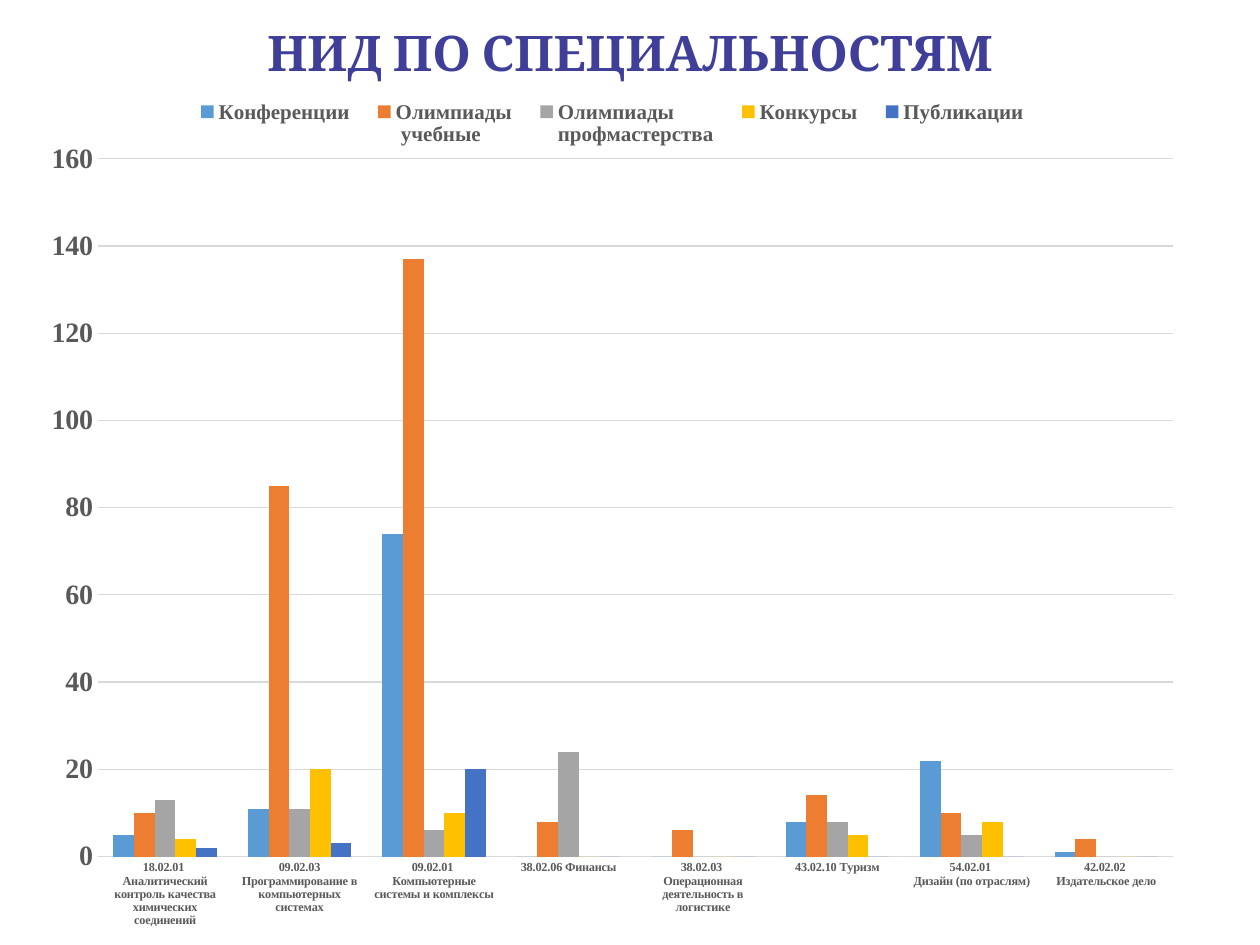
import lxml.etree
import pptx
import pptx.chart.data
import pptx.dml.color
import pptx.enum.chart
import pptx.enum.text
import pptx.oxml
import pptx.oxml.ns
import pptx.util
from dataclasses import dataclass

PX = 9144  # 100 px to the inch


@dataclass(frozen=True)
class Theme:
    title_font: str = "Cambria"
    chart_font: str = "Times New Roman"
    title: str = "3F3F9A"
    title_outline: str = "A585B1"
    label: str = "595959"
    grid: str = "D9D9D9"
    series: tuple = ("5B9BD5", "ED7D31", "A5A5A5", "FFC000", "4472C4")
    title_size: int = 28
    value_size: int = 16
    legend_size: int = 12
    category_size: int = 7


THEME = Theme()

CATEGORIES = [
    "18.02.01 \nАналитический контроль качества химических соединений",
    "09.02.03 Программирование в компьютерных системах",
    "09.02.01 \nКомпьютерные системы и комплексы",
    "38.02.06 Финансы",
    "38.02.03 \nОперационная деятельность в логистике",
    "43.02.10 Туризм",
    "54.02.01 \nДизайн (по отраслям)",
    "42.02.02 \nИздательское дело",
]
ACTIVITIES = {
    "Конференции": (5, 11, 74, 0, 0, 8, 22, 1),
    "Олимпиады\n учебные": (10, 85, 137, 8, 6, 14, 10, 4),
    "Олимпиады \nпрофмастерства": (13, 11, 6, 24, 0, 8, 5, 0),
    "Конкурсы": (4, 20, 10, 0, 0, 5, 8, 0),
    "Публикации": (2, 3, 20, 0, 0, 0, 0, 0),
}


def rgb(value):
    return pptx.dml.color.RGBColor.from_string(value)


def to_emu(box):
    return [length * PX for length in box]


def style_font(font, name, size, color):
    font.name, font.size, font.bold = name, pptx.util.Pt(size), True
    font.color.rgb = rgb(color)


def outline_text(span, color, points):
    line = pptx.oxml.parse_xml(
        f'<a:ln {pptx.oxml.ns.nsdecls("a")} w="{pptx.util.Pt(points)}">'
        f'<a:solidFill><a:srgbClr val="{color}"/></a:solidFill></a:ln>')
    span.font._element.insert(0, line)


def set_layout(part, before, x, y, width, height, inner=False):
    """Place a chart part by fractions of the chart, ahead of the named child."""
    for old in part.findall(pptx.oxml.ns.qn("c:layout")):
        part.remove(old)
    target = '<c:layoutTarget val="inner"/>' if inner else ""
    sizes = "".join(f'<c:{tag} val="{value}"/>' for tag, value in
                    (("x", x), ("y", y), ("w", width), ("h", height)))
    layout = pptx.oxml.parse_xml(
        f'<c:layout {pptx.oxml.ns.nsdecls("c")}><c:manualLayout>{target}'
        f'<c:xMode val="edge"/><c:yMode val="edge"/>{sizes}'
        f'</c:manualLayout></c:layout>')
    part.find(pptx.oxml.ns.qn(before)).addprevious(layout)


def add_title(page, box, text):
    frame = page.shapes.add_textbox(*to_emu(box)).text_frame
    frame.word_wrap = True
    frame.text = text
    para = frame.paragraphs[0]
    para.alignment = pptx.enum.text.PP_ALIGN.CENTER
    span = para.runs[0]
    style_font(span.font, THEME.title_font, THEME.title_size, THEME.title)
    outline_text(span, THEME.title_outline, 2.25)


def add_activity_chart(page, box):
    data = pptx.chart.data.CategoryChartData()
    data.categories = CATEGORIES
    for name, values in ACTIVITIES.items():
        data.add_series(name, values)
    kinds = pptx.enum.chart
    chart = page.shapes.add_chart(
        kinds.XL_CHART_TYPE.COLUMN_CLUSTERED, *to_emu(box), data).chart
    chart.has_title = False
    style_font(chart.font, THEME.chart_font, THEME.value_size, "000000")

    # Columns
    plot = chart.plots[0]
    plot.gap_width, plot.overlap = 150, 0
    plot.vary_by_categories = False
    for series, color in zip(plot.series, THEME.series):
        series.format.fill.solid()
        series.format.fill.fore_color.rgb = rgb(color)
        series.invert_if_negative = False

    # Axes
    for axis, size in ((chart.category_axis, THEME.category_size),
                       (chart.value_axis, THEME.value_size)):
        axis.major_tick_mark = axis.minor_tick_mark = kinds.XL_TICK_MARK.NONE
        axis.format.line.fill.background()
        style_font(axis.tick_labels.font, THEME.chart_font, size, THEME.label)
    values = chart.value_axis
    values.minimum_scale, values.maximum_scale, values.major_unit = 0, 160, 20
    values.has_major_gridlines = True
    grid = values.major_gridlines.format.line
    grid.color.rgb, grid.width = rgb(THEME.grid), pptx.util.Pt(0.75)

    # Legend
    chart.has_legend = True
    legend = chart.legend
    legend.position = kinds.XL_LEGEND_POSITION.TOP
    legend.include_in_layout = False
    style_font(legend.font, THEME.chart_font, THEME.legend_size, THEME.label)

    # Placement inside the chart
    plot_area = chart._chartSpace.chart.plotArea
    set_layout(plot_area, "c:barChart", 0.06, 0.11, 0.92, 0.79, inner=True)
    set_layout(legend._element, "c:overlay", 0.13, 0.04, 0.74, 0.06)


def main():
    deck = pptx.Presentation()
    deck.slide_width, deck.slide_height = 1000 * PX, 750 * PX
    page = deck.slides.add_slide(deck.slide_layouts[6])
    add_activity_chart(page, (22, 49, 928, 701))
    add_title(page, (50, 13, 900, 125), "НИД ПО СПЕЦИАЛЬНОСТЯМ")
    deck.save("out.pptx")


if __name__ == "__main__":
    main()
